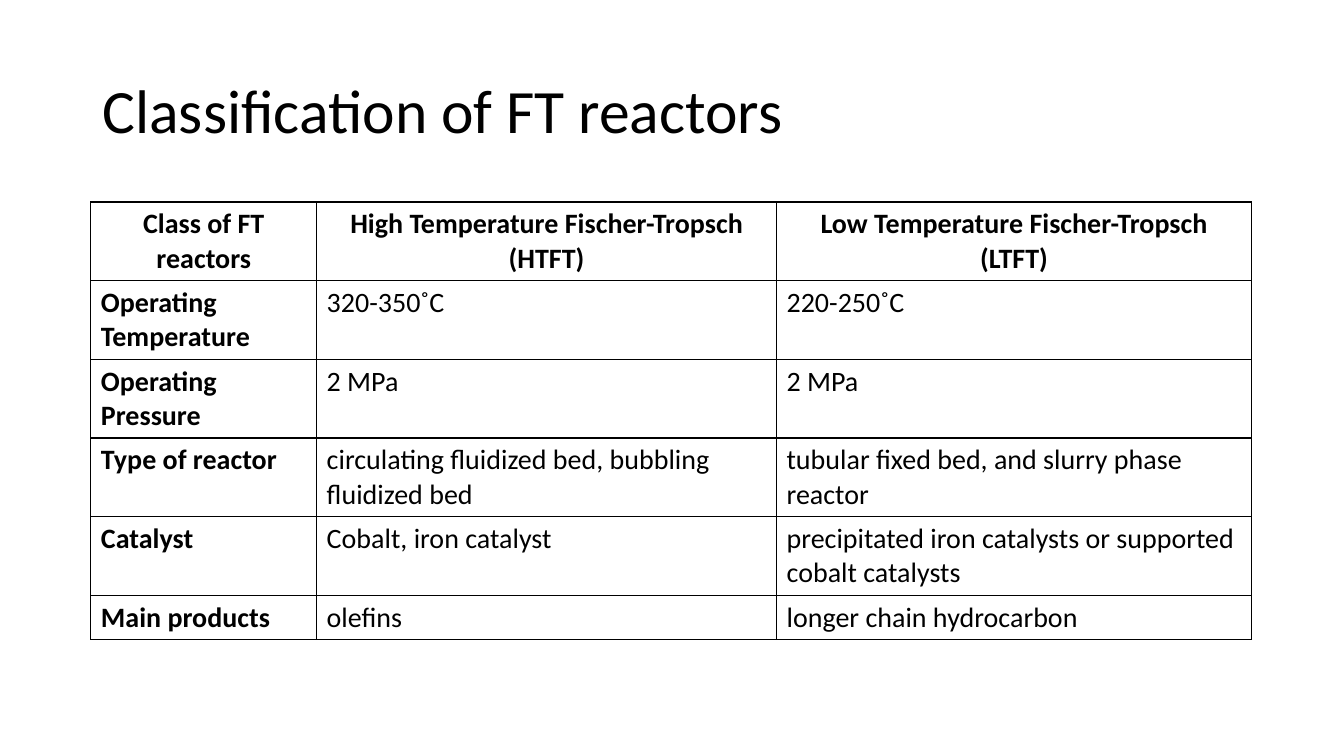
from lxml import etree
from pptx import Presentation
from pptx import util as u
from pptx.dml.color import RGBColor
from pptx.enum import text
from pptx.oxml import ns

ROWS = [
    ("Class of FT reactors", "High Temperature Fischer-Tropsch (HTFT)",
     "Low Temperature Fischer-Tropsch (LTFT)"),
    ("Operating Temperature", "320-350˚C", "220-250˚C"),
    ("Operating Pressure", "2 MPa", "2 MPa"),
    ("Type of reactor", "circulating fluidized bed, bubbling fluidized bed",
     "tubular fixed bed, and slurry phase reactor"),
    ("Catalyst", "Cobalt, iron catalyst",
     "precipitated iron catalysts or supported cobalt catalysts"),
    ("Main products", "olefins", "longer chain hydrocarbon"),
]
WIDTHS = [5.69, 11.59, 11.97]


def color(code):
    return RGBColor.from_string(code)


class Deck:
    face = "Calibri"
    ink = "000000"

    def __init__(self):
        self.prs = Presentation()
        self.prs.slide_width = u.Cm(33.87)
        self.prs.slide_height = u.Cm(19.05)
        self.slide = self.prs.slides.add_slide(self.prs.slide_layouts[5])

    def style(self, para, size, bold=False, align=text.PP_ALIGN.LEFT):
        para.alignment = align
        font = para.font
        font.name, font.size, font.bold = self.face, u.Pt(size), bold
        font.color.rgb = color(self.ink)

    def title(self, words, left, top, width, height):
        shape = self.slide.shapes.title
        shape.left, shape.top = u.Cm(left), u.Cm(top)
        shape.width, shape.height = u.Cm(width), u.Cm(height)
        frame = shape.text_frame
        frame.text = words
        frame.word_wrap = True
        frame.auto_size = text.MSO_AUTO_SIZE.NONE
        frame.vertical_anchor = text.MSO_ANCHOR.MIDDLE
        para = frame.paragraphs[0]
        para.line_spacing = 0.9
        self.style(para, 44)

    def border(self, cell, width=1):
        props = cell._tc.get_or_add_tcPr()
        for side in ("a:lnL", "a:lnR", "a:lnT", "a:lnB"):
            line = etree.SubElement(props, ns.qn(side), w=str(u.Pt(width)))
            fill = etree.SubElement(line, ns.qn("a:solidFill"))
            etree.SubElement(fill, ns.qn("a:srgbClr"), val=self.ink)

    def table(self, rows, widths, left, top, height, least):
        shape = self.slide.shapes.add_table(
            len(rows), len(widths), u.Cm(left), u.Cm(top),
            u.Cm(sum(widths)), u.Cm(height))
        grid = shape.table
        grid.horz_banding = False
        for col, width in zip(grid.columns, widths):
            col.width = u.Cm(width)
        for row in grid.rows:
            row.height = u.Cm(least)
        shape.height = u.Cm(height)
        for r, row in enumerate(rows):
            for c, words in enumerate(row):
                cell = grid.cell(r, c)
                cell.text = words
                self.border(cell)
                cell.fill.background()
                align = text.PP_ALIGN.LEFT if r else text.PP_ALIGN.CENTER
                self.style(cell.text_frame.paragraphs[0], 20,
                           r == 0 or c == 0, align)


def main():
    deck = Deck()
    deck.title("Classification of FT reactors", 2.33, 1.01, 29.21, 3.68)
    deck.table(ROWS, WIDTHS, 2.29, 5.09, 10.85, 1.03)
    deck.prs.save("out.pptx")


if __name__ == "__main__":
    main()
